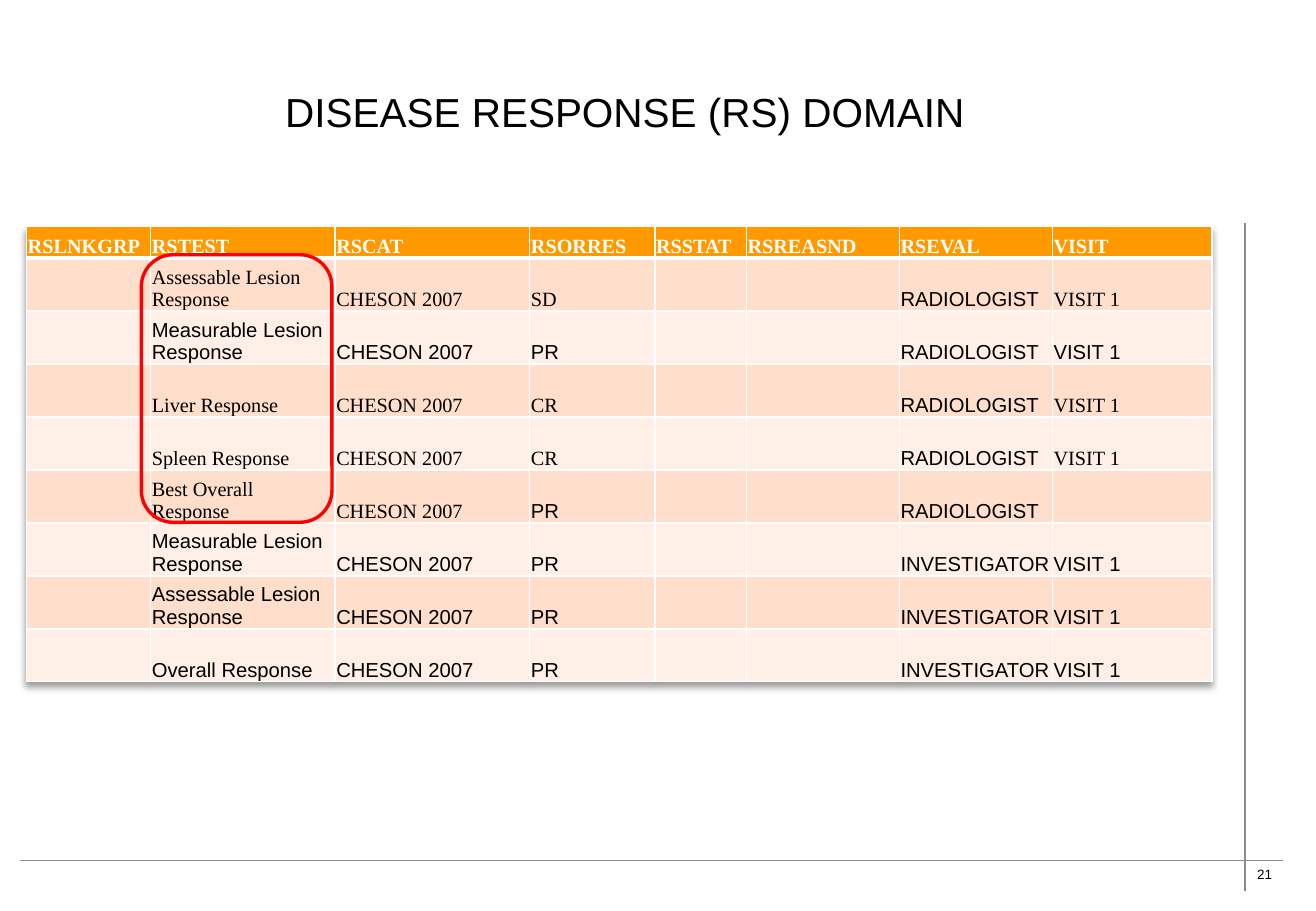
from lxml import etree
from pptx import Presentation
from pptx.dml.color import RGBColor
from pptx.enum import shapes, text
from pptx.oxml import ns, parse_xml
from pptx.util import Pt

TITLE = "DISEASE RESPONSE (RS) DOMAIN"
PAGE = "21"
HEADER = ["RSLNKGRP", "RSTEST", "RSCAT", "RSORRES", "RSSTAT", "RSREASND", "RSEVAL", "VISIT"]
CATEGORY = "CHESON 2007"
READER, SITE = "RADIOLOGIST", "INVESTIGATOR"
RESPONSES = [
    ("Assessable Lesion Response", "SD", READER, "VISIT 1"),
    ("Measurable Lesion Response", "PR", READER, "VISIT 1"),
    ("Liver Response", "CR", READER, "VISIT 1"),
    ("Spleen Response", "CR", READER, "VISIT 1"),
    ("Best Overall Response", "PR", READER, ""),
    ("Measurable Lesion Response", "PR", SITE, "VISIT 1"),
    ("Assessable Lesion Response", "PR", SITE, "VISIT 1"),
    ("Overall Response", "PR", SITE, "VISIT 1"),
]
SERIF_COLUMNS = {0: range(8), 1: (1, 2, 3, 7), 3: (1, 2, 3, 7), 4: (1, 2, 3, 7), 5: (1, 2)}
COLUMN_WIDTHS = [73.6, 109.3, 115.4, 74.2, 54.2, 90.7, 90.7, 94.6]
HEADER_HEIGHT, ROW_HEIGHT = 18.9, 31.4
TABLE_LEFT, TABLE_TOP = 15.7, 134.2
RULES = [(12, 510, 760.5, 510), (738, 528, 738, 132)]
HIGHLIGHT = (83.8, 151, 113, 158.6)
SANS, SERIF = "Arial", "Times New Roman"
COLORS = {"ink": "000000", "white": "FFFFFF", "rule": "8B8B8B", "header": "FF9900",
          "dark_band": "FFDECC", "light_band": "FFEFE7", "highlight": "FF0000"}


def rgb(name):
    return RGBColor.from_string(COLORS[name])


def style(paragraph, size, face, color, bold=False):
    for run in paragraph.runs:
        font = run.font
        font.size, font.name, font.bold = Pt(size), face, bold
        font.color.rgb = rgb(color)


def add_label(slide, box, wording, size, wrap):
    frame = slide.shapes.add_textbox(*map(Pt, box)).text_frame
    frame.word_wrap = wrap
    frame.vertical_anchor = text.MSO_ANCHOR.MIDDLE
    frame.text = wording
    style(frame.paragraphs[0], size, SANS, "ink")


def add_rule(slide, ends):
    rule = slide.shapes.add_connector(shapes.MSO_CONNECTOR.STRAIGHT, *map(Pt, ends))
    rule.line.color.rgb, rule.line.width = rgb("rule"), Pt(1)
    etree.SubElement(rule._element.spPr, ns.qn("a:effectLst"))


def add_borders(cell, row):
    widths = {"lnL": 1, "lnR": 1, "lnT": 3 if row == 1 else 1, "lnB": 3 if row == 0 else 1}
    for side, width in widths.items():
        cell._tc.get_or_add_tcPr().append(parse_xml(
            f'<a:{side} {ns.nsdecls("a")} w="{Pt(width)}"><a:solidFill>'
            f'<a:srgbClr val="{COLORS["white"]}"/></a:solidFill></a:{side}>'))


def fill_cell(cell, row, column, wording):
    cell.margin_left = cell.margin_right = cell.margin_top = Pt(0.75)
    cell.margin_bottom = 0
    cell.vertical_anchor = text.MSO_ANCHOR.BOTTOM
    add_borders(cell, row)
    band = "header" if row == 0 else "dark_band" if row % 2 else "light_band"
    cell.fill.solid()
    cell.fill.fore_color.rgb = rgb(band)
    if wording:
        cell.text_frame.text = wording
        face = SERIF if column in SERIF_COLUMNS.get(row, ()) else SANS
        style(cell.text_frame.paragraphs[0], 12, face, "ink" if row else "white", row == 0)


def add_responses(slide):
    rows = [HEADER] + [["", test, CATEGORY, result, "", "", evaluator, visit]
                       for test, result, evaluator, visit in RESPONSES]
    heights = [HEADER_HEIGHT] + [ROW_HEIGHT] * len(RESPONSES)
    table = slide.shapes.add_table(
        len(rows), len(HEADER), Pt(TABLE_LEFT), Pt(TABLE_TOP),
        Pt(sum(COLUMN_WIDTHS)), Pt(sum(heights))).table
    table._tbl.tblPr.insert(0, parse_xml(
        f'<a:effectLst {ns.nsdecls("a")}><a:outerShdw blurRad="{Pt(4)}" dist="{Pt(3)}" '
        f'dir="5400000" algn="t" rotWithShape="0"><a:srgbClr val="{COLORS["ink"]}">'
        '<a:alpha val="40000"/></a:srgbClr></a:outerShdw></a:effectLst>'))
    for column, width in zip(table.columns, COLUMN_WIDTHS):
        column.width = Pt(width)
    for r, (height, row) in enumerate(zip(heights, rows)):
        table.rows[r].height = Pt(height)
        for c, wording in enumerate(row):
            fill_cell(table.cell(r, c), r, c, wording)


def add_highlight(slide):
    outline = slide.shapes.add_shape(shapes.MSO_SHAPE.ROUNDED_RECTANGLE, *map(Pt, HIGHLIGHT))
    outline.shadow.inherit = False
    outline.fill.background()
    outline.line.color.rgb, outline.line.width = rgb("highlight"), Pt(2)


def main():
    """Build the disease response domain slide."""
    deck = Presentation()
    deck.slide_width, deck.slide_height = Pt(780), Pt(540)
    slide = deck.slides.add_slide(deck.slide_layouts[6])
    add_label(slide, (738, 509.8, 24.5, 16.6), PAGE, 8, False)
    for ends in RULES:
        add_rule(slide, ends)
    add_label(slide, (162, 30.2, 563.8, 72), TITLE, 24, True)
    add_responses(slide)
    add_highlight(slide)
    deck.save("out.pptx")


if __name__ == "__main__":
    main()
